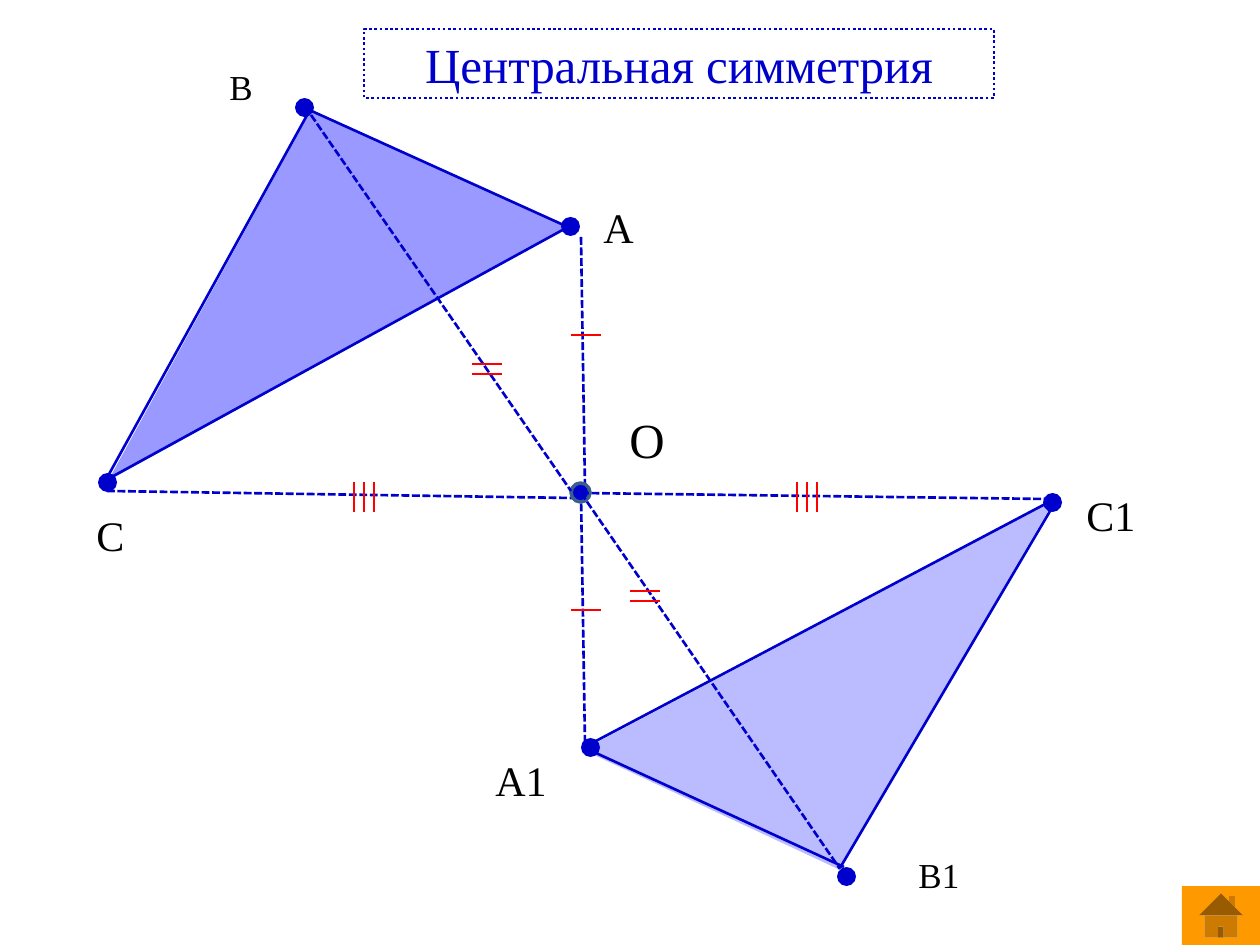
from pptx import Presentation
from pptx.dml.color import RGBColor
from pptx.enum.dml import MSO_LINE
from pptx.enum.shapes import MSO_CONNECTOR, MSO_SHAPE
from pptx.enum.text import MSO_ANCHOR, MSO_AUTO_SIZE, PP_ALIGN
from pptx.oxml.ns import qn
from pptx.util import Emu, Inches, Pt
from lxml.etree import SubElement

COLORS = {
    "blue": "0000CC",
    "lilac": "9999FF",
    "rim": "3A5F8C",
    "red": "FF0000",
    "gold": "FF9900",
    "black": "000000",
}
SCALE = 914400 / 126


def px(*nums):
    return [Emu(round(n * SCALE)) for n in nums]


def tint(name):
    return RGBColor.from_string(COLORS[name])


def write(frame, text, size=24, color="black", align=PP_ALIGN.LEFT, font="Times New Roman"):
    par = frame.paragraphs[0]
    par.alignment = align
    run = par.add_run()
    run.text = text
    run.font.name = font
    run.font.size = Pt(size)
    run.font.color.rgb = tint(color)


class Board:
    def __init__(self, slide, width=1.5):
        self.slide = slide
        self.width = width

    def stroke(self, line, color, width=None, dash=None):
        line.color.rgb = tint(color)
        line.width = Pt(width or self.width)
        if dash:
            line.dash_style = dash

    def title(self, text, box):
        head = self.slide.shapes.title
        head.left, head.top, head.width, head.height = px(*box)
        self.stroke(head.line, "blue", dash=MSO_LINE.ROUND_DOT)
        frame = head.text_frame
        frame.auto_size = MSO_AUTO_SIZE.NONE
        frame.vertical_anchor = MSO_ANCHOR.MIDDLE
        write(frame, text, size=28, color="blue", align=PP_ALIGN.CENTER)

    def label(self, text, box, size=24):
        frame = self.slide.shapes.add_textbox(*px(*box)).text_frame
        frame.word_wrap = False
        frame.auto_size = MSO_AUTO_SIZE.SHAPE_TO_FIT_TEXT
        write(frame, text, size=size)

    def shape(self, kind, box, color):
        item = self.slide.shapes.add_shape(kind, *px(*box))
        item.shadow.inherit = False
        item.fill.solid()
        item.fill.fore_color.rgb = tint(color)
        item.line.fill.background()
        return item

    def wedge(self, box, turn, alpha=None):
        item = self.shape(MSO_SHAPE.ISOSCELES_TRIANGLE, box, "lilac")
        item.adjustments[0] = 0.68
        item.rotation = turn
        if alpha:
            shade = item.fill._xPr.find(qn("a:solidFill"))[0]
            SubElement(shade, qn("a:alpha")).set("val", str(alpha * 1000))

    def dot(self, left, top, rim=None):
        item = self.shape(MSO_SHAPE.OVAL, (left, top, 19, 19), "blue")
        if rim:
            self.stroke(item.line, rim, width=2)

    def line(self, ends, color="blue", dash=None):
        item = self.slide.shapes.add_connector(MSO_CONNECTOR.STRAIGHT, *px(*ends))
        self.stroke(item.line, color, dash=dash)
        SubElement(item._element.spPr, qn("a:effectLst"))

    def ray(self, *ends):
        self.line(ends, dash=MSO_LINE.SQUARE_DOT)

    def ticks(self, left, top, count, wide=True):
        for i in range(count):
            step = 10 * i
            if wide:
                ends = (left, top + step, left + 30, top + step)
            else:
                ends = (left + step, top, left + step, top + 30)
            self.line(ends, color="red")


def main():
    deck = Presentation()
    deck.slide_width, deck.slide_height = Inches(10), Inches(7.5)
    board = Board(deck.slides.add_slide(deck.slide_layouts[5]))

    board.wedge((605, 612, 533, 226), 152.1, alpha=66)
    board.wedge((21, 142, 524, 226), 331.1)
    board.title("Центральная симметрия", (364, 29, 630, 69))

    for text, box, size in (
        ("В", (217, 59, 49, 55), 20),
        ("А", (591, 195, 57, 64), 24),
        ("С", (84, 503, 54, 64), 24),
        ("О", (617, 403, 62, 72), 28),
        ("В1", (906, 847, 67, 55), 20),
        ("А1", (483, 748, 77, 64), 24),
        ("С1", (1074, 483, 76, 64), 24),
    ):
        board.label(text, box, size)

    for ends in (
        (108, 479, 568, 227),
        (568, 227, 305, 108),
        (311, 108, 108, 476),
        (596, 741, 1051, 501),
        (844, 867, 596, 753),
        (1056, 501, 840, 868),
    ):
        board.line(ends)

    board.ray(581, 237, 585, 486)
    board.ray(581, 493, 585, 742)
    board.ray(107, 491, 573, 498)
    board.dot(571, 483, rim="rim")
    board.ray(581, 493, 1047, 499)
    board.ray(311, 115, 571, 491)
    board.ray(581, 493, 840, 869)

    for spot in ((561, 217), (295, 98), (98, 473), (581, 738), (1043, 493), (837, 867)):
        board.dot(*spot)

    for left, top, count in ((571, 335, 1), (571, 610, 1), (472, 364, 2), (630, 591, 2)):
        board.ticks(left, top, count)
    for left in (354, 797):
        board.ticks(left, 482, 3, wide=False)

    board.shape(MSO_SHAPE.ACTION_BUTTON_HOME, (1182, 886, 78, 59), "gold")
    deck.save("out.pptx")


if __name__ == "__main__":
    main()
